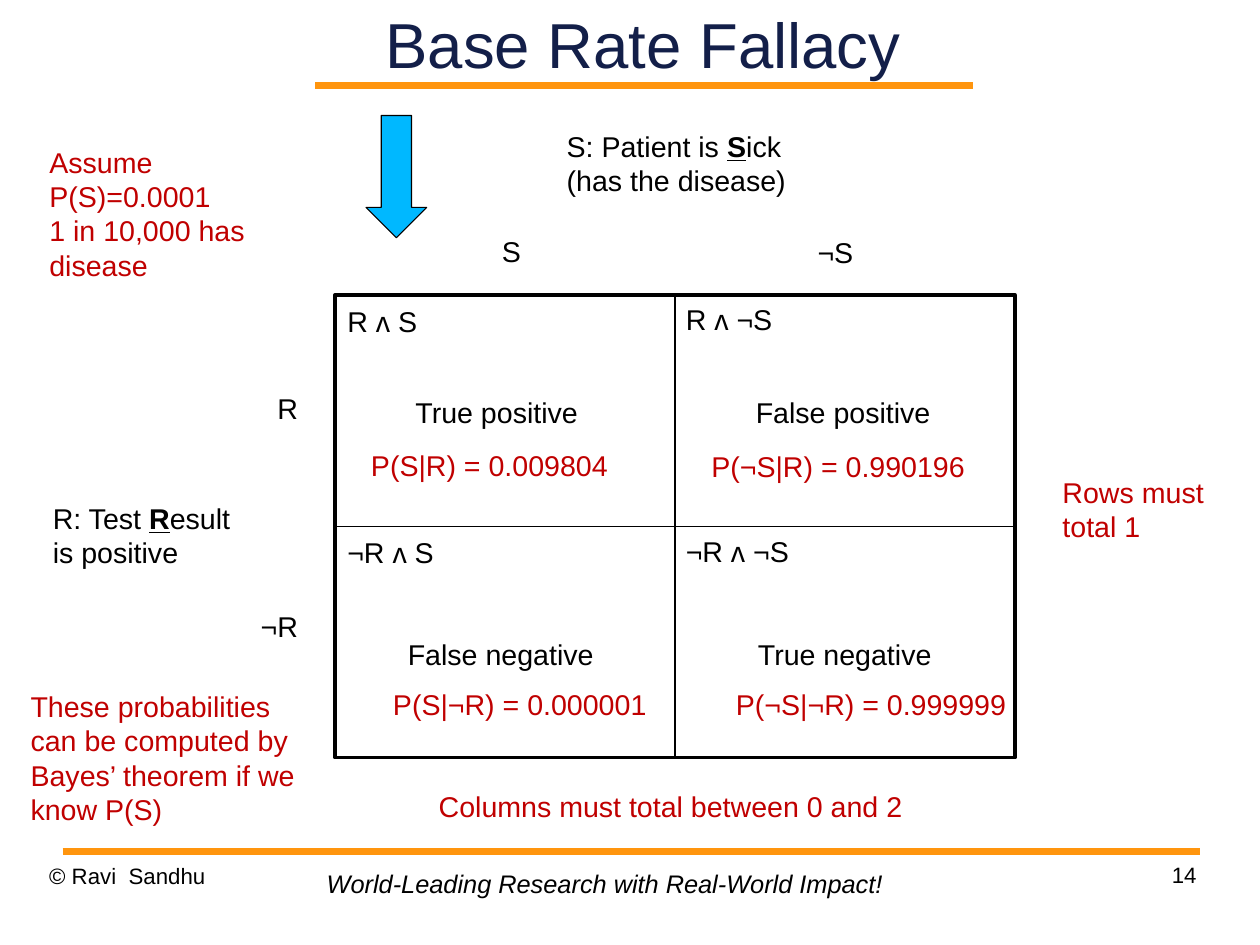
from pptx import Presentation
from pptx import util as u
from pptx.dml.color import RGBColor
from pptx.enum import shapes, text
from lxml import etree

BLACK = RGBColor(0x00, 0x00, 0x00)
RED = RGBColor(0xC0, 0x00, 0x00)
NAVY = RGBColor(0x13, 0x1F, 0x49)
ORANGE = RGBColor(0xFF, 0x95, 0x0E)
BLUE = RGBColor(0x00, 0xB8, 0xFF)
LEFT, MID, RIGHT = text.PP_ALIGN.LEFT, text.PP_ALIGN.CENTER, text.PP_ALIGN.RIGHT
NS = "http://schemas.openxmlformats.org/drawingml/2006/main"

deck = Presentation()
deck.slide_width, deck.slide_height = u.Pt(793.7), u.Pt(595.28)
slide = deck.slides.add_slide(deck.slide_layouts[5])


def rule(x1, y1, x2, y2, color, width):
    line = slide.shapes.add_connector(
        shapes.MSO_CONNECTOR.STRAIGHT, u.Pt(x1), u.Pt(y1), u.Pt(x2), u.Pt(y2))
    line.line.color.rgb = color
    line.line.width = u.Pt(width)
    etree.SubElement(line._element.spPr, "{%s}effectLst" % NS)


def label(x, y, w, words, color=BLACK, align=LEFT, rows=1, wrap=False, size=18):
    """Add a text box; words between asterisks are bold and underlined."""
    box = slide.shapes.add_textbox(
        u.Pt(x), u.Pt(y), u.Pt(w), u.Pt(7.2 + 21.6 * rows))
    frame = box.text_frame
    frame.word_wrap = wrap
    for i, row in enumerate(words.split("\n")):
        para = frame.paragraphs[0] if i == 0 else frame.add_paragraph()
        para.alignment = align
        para.font.name, para.font.size = "Arial", u.Pt(size)
        para.font.color.rgb = color
        for j, part in enumerate(row.split("*")):
            run = para.add_run()
            run.text = part
            if j % 2:
                run.font.bold = run.font.underline = True
    return frame


# Title
title = slide.shapes.title
title.left, title.top = u.Pt(173.5), u.Pt(0)
title.width, title.height = u.Pt(463), u.Pt(54)
frame = title.text_frame
frame.text = "Base Rate Fallacy"
frame.auto_size = text.MSO_AUTO_SIZE.NONE
frame.vertical_anchor = text.MSO_ANCHOR.MIDDLE
frame.margin_left = frame.margin_right = frame.margin_top = frame.margin_bottom = 0
para = frame.paragraphs[0]
para.alignment = MID
para.font.name, para.font.size = "Arial", u.Pt(40)
para.font.color.rgb = NAVY

# Orange rules and footer
rule(198.7, 54, 612.7, 54, ORANGE, 4.31)
rule(39.4, 536.2, 755.8, 536.2, ORANGE, 4.31)
for x, y, words, align in [(31, 543.3, "© Ravi  Sandhu", LEFT),
                           (568.8, 542.2, "14", RIGHT)]:
    frame = label(x, y, 185, words, align=align, wrap=True, size=14)
    frame.margin_left = frame.margin_right = 0
    frame.margin_top = frame.margin_bottom = 0
    frame.paragraphs[0].line_spacing = 1.01
motto = label(198.7, 543.6, 365.8,
              "World-Leading Research with Real-World Impact!", size=16)
motto.paragraphs[0].font.italic = True

# Two-by-two matrix
X, Y, W, H = 211, 185.8, 214.2, 145.8
frame = slide.shapes.add_shape(
    shapes.MSO_SHAPE.RECTANGLE, u.Pt(X), u.Pt(Y), u.Pt(2 * W), u.Pt(2 * H))
frame.shadow.inherit = False
frame.fill.background()
frame.line.color.rgb = BLACK
frame.line.width = u.Pt(2)
rule(X + W, Y, X + W, Y + 2 * H, BLACK, 0.75)
rule(X, Y + H, X + 2 * W, Y + H, BLACK, 0.75)

# Cell corners
corners = ["R ᴧ S", "R ᴧ ¬S", "¬R ᴧ S", "¬R ᴧ ¬S"]
for i, (words, w) in enumerate(zip(corners, [59, 70, 70, 80])):
    row, col = divmod(i, 2)
    label(X + col * W + 0.7 - col, Y + row * H + 2 - col, w, words)

# Cell outcomes
for x, y, w, words in [(254.2, 245.5, 117.4, "True positive"),
                       (467.8, 245.5, 126.7, "False positive"),
                       (248.4, 397.4, 134, "False negative"),
                       (465.1, 397.4, 134, "True negative")]:
    label(x, y, w, words, align=MID, wrap=True)

# Cell probabilities
for x, y, w, words in [(226.6, 278.6, 164.9, "P(S|R) = 0.009804"),
                       (441, 279, 175.7, "P(¬S|R) = 0.990196"),
                       (240.5, 429.1, 175.7, "P(S|¬R) = 0.000001"),
                       (456.5, 429.1, 186.5, "P(¬S|¬R) = 0.999999")]:
    label(x, y, w, words, RED)

# Row and column heads
for x, y, w, words in [(167.4, 242.6, 27.4, "R"), (156.6, 379.9, 38.2, "¬R"),
                       (307.8, 144, 27.4, "S"), (507.2, 144.2, 37.4, "¬S")]:
    label(x, y, w, words, align=RIGHT)
label(349.9, 77.6, 154.1, "S: Patient is *S*ick\n(has the disease)", rows=2)
label(26.2, 312, 132.5, "R: Test *R*esult\nis positive", rows=2)

# Arrow to the first column
arrow = slide.shapes.add_shape(
    shapes.MSO_SHAPE.DOWN_ARROW, u.Pt(230.6), u.Pt(72.8), u.Pt(38.2), u.Pt(77))
arrow.shadow.inherit = False
arrow.fill.solid()
arrow.fill.fore_color.rgb = BLUE
arrow.line.color.rgb = BLACK
arrow.line.width = u.Pt(0.75)

# Red remarks
label(24, 87.6, 175, "Assume P(S)=0.0001\n1 in 10,000 has disease", RED,
      rows=4, wrap=True)
label(12.2, 430.4, 197.3, "These probabilities can be computed by "
      "Bayes’ theorem if we know P(S)", RED, rows=4, wrap=True)
label(662.2, 295.7, 121.7, "Rows must total 1", RED, rows=2, wrap=True)
label(269.3, 493.2, 309.6, "Columns must total between 0 and 2", RED)

deck.save("out.pptx")
